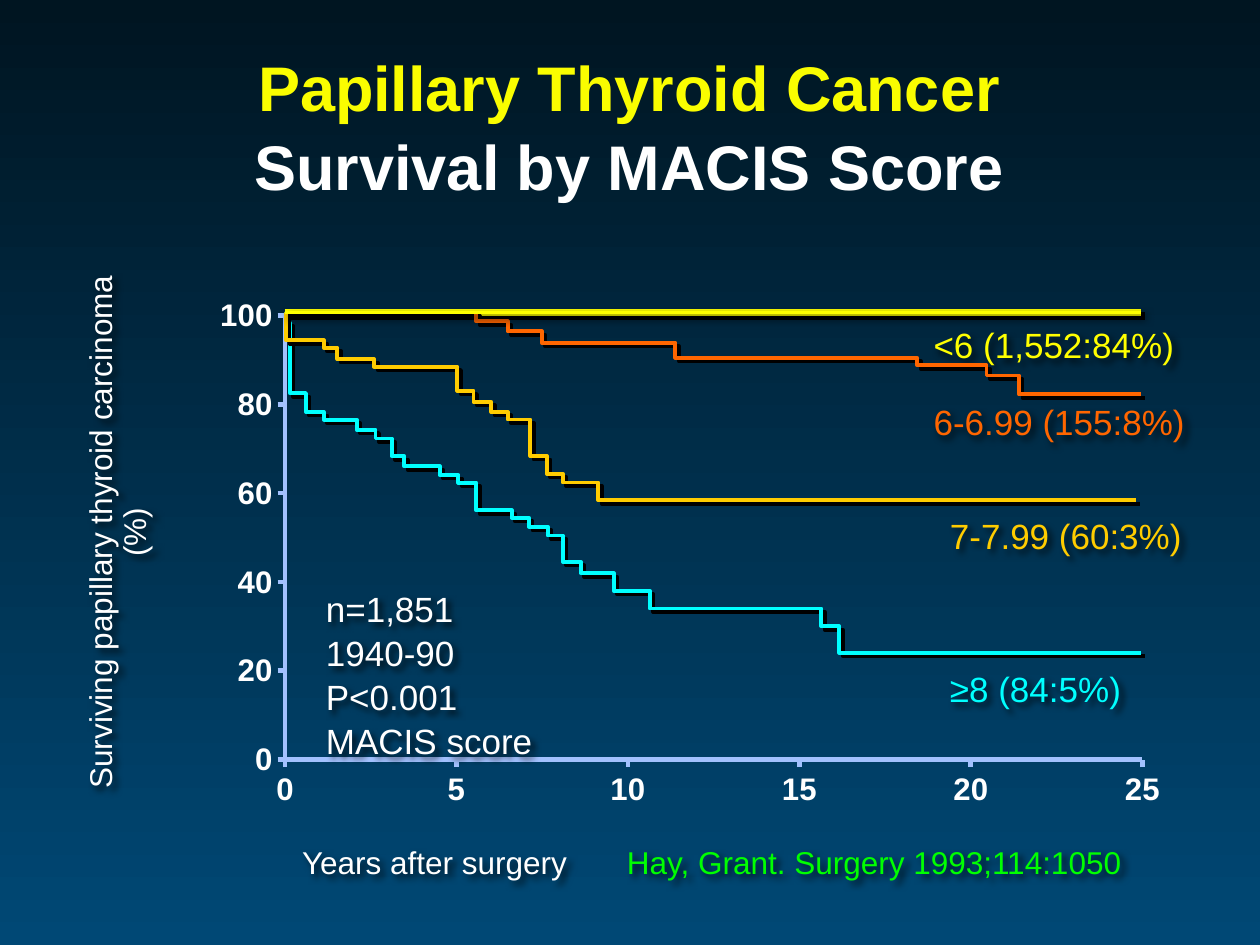
"""Build the survival slide: axes, stepped curves and labels."""
from lxml.etree import SubElement
from pptx import Presentation
from pptx.chart.data import XyChartData
from pptx.dml.color import RGBColor
from pptx.enum.chart import XL_CHART_TYPE, XL_MARKER_STYLE, XL_TICK_MARK
from pptx.enum.shapes import MSO_CONNECTOR
from pptx.enum.text import MSO_ANCHOR, MSO_AUTO_SIZE, PP_ALIGN
from pptx.oxml import parse_xml
from pptx.oxml.ns import nsdecls, qn
from pptx.util import Cm, Pt

THEME = dict(
    font="Arial", dark="001521", deep="004875", axis="A2C1FE",
    white="FFFFFF", title="FAFD00", yellow="FFFF00", orange="FF6600",
    gold="FFCC00", cyan="00FFFF", green="00FF00", black="000000",
    head=36, label=20, note=18, tick=17.8, thin=2.25, thick=4.5, rule=2.67,
)
TITLE = [("Papillary Thyroid Cancer", "title"), ("Survival by MACIS Score", "white")]
SIDE = "Surviving papillary thyroid carcinoma (%)"
FOOT = [("Years after surgery", "white"), ("\tHay, Grant. Surgery 1993;114:1050", "green")]
FACTS = ["n=1,851", "1940-90", "P<0.001", "MACIS score"]
LABELS = [
    ("<6 (1,552:84%)", "yellow", 18.57, 6.4, 5.41),
    ("6-6.99 (155:8%)", "orange", 18.57, 7.95, 5.61),
    ("7-7.99 (60:3%)", "gold", 18.9, 10.24, 5.21),
    ("≥8 (84:5%)", "cyan", 18.9, 13.34, 3.99),
]
CURVES = [
    ("yellow", "thick", 25, []),
    ("cyan", "thin", 25, [
        (0.04, 97.74), (0.15, 81.92), (0.62, 77.68), (1.14, 75.99),
        (2.1, 73.73), (2.65, 71.75), (3.12, 67.8), (3.49, 65.54),
        (4.52, 63.56), (5.07, 61.86), (5.59, 55.65), (6.62, 53.95),
        (7.13, 51.98), (7.68, 50), (8.12, 44.07), (8.64, 41.53),
        (9.6, 37.57), (10.66, 33.62), (15.66, 29.66), (16.18, 23.73)]),
    ("gold", "thin", 24.85, [
        (0.04, 93.79), (1.14, 92.09), (1.54, 89.55), (2.61, 87.85),
        (5.04, 82.49), (5.51, 79.94), (6.03, 77.68), (6.51, 75.99),
        (7.17, 67.8), (7.65, 63.84), (8.12, 61.86), (9.15, 57.91)]),
    ("orange", "thin", 25, [
        (5.59, 98.02), (6.51, 95.76), (7.5, 93.22), (11.4, 89.83),
        (18.46, 88.14), (20.48, 85.88), (21.43, 81.64)]),
]
LEFT, BASE, WIDE, TALL = 5.74, 15.29, 17.27, 8.99
YEARS, FULL = 25, 100


def tint(name):
    return RGBColor.from_string(THEME[name])


def spot(year, rate):
    return Cm(LEFT + WIDE * year / YEARS), Cm(BASE - TALL * rate / FULL)


def style(font, size, hue, bold=False):
    font.name, font.size, font.bold = THEME["font"], Pt(THEME[size]), bold
    font.color.rgb = tint(hue)


def stroke(line, hue, width):
    line.color.rgb = tint(hue)
    line.width = Pt(THEME[width])


def shade(shape, gap=2.8, blur=0, alpha=100):
    group = SubElement(shape._element.spPr, qn("a:effectLst"))
    cast = SubElement(group, qn("a:outerShdw"), blurRad=str(Pt(blur)),
                      dist=str(Pt(gap)), dir="2700000", algn="ctr", rotWithShape="0")
    tone = SubElement(cast, qn("a:srgbClr"), val=THEME["black"])
    SubElement(tone, qn("a:alpha"), val=str(alpha * 1000))


def add_text(slide, place, rows, size, wrap=False, bold=False):
    box = slide.shapes.add_textbox(*map(Cm, place))
    frame = box.text_frame
    frame.word_wrap = wrap
    frame.auto_size = MSO_AUTO_SIZE.NONE if wrap else MSO_AUTO_SIZE.SHAPE_TO_FIT_TEXT
    frame.text = "\n".join("".join(text for text, hue in row) for row in rows)
    for para, row in zip(frame.paragraphs, rows):
        para.text = ""
        for text, hue in row:
            run = para.add_run()
            run.text = text
            style(run.font, size, hue, bold)
    return box


def add_axes(slide):
    data = XyChartData()
    data.add_series("Series 1").add_data_point(0, 0)
    chart = slide.shapes.add_chart(XL_CHART_TYPE.XY_SCATTER, Cm(3.84), Cm(5.77),
                                   Cm(19.66), Cm(11.1), data).chart
    chart.has_title = chart.has_legend = False
    style(chart.font, "tick", "white", True)
    plot = chart.plots[0]
    plot.vary_by_categories = False
    line = plot.series[0]
    line.smooth = False
    line.marker.style = XL_MARKER_STYLE.NONE
    line.format.line.fill.background()
    for axis, top, step in ((chart.category_axis, YEARS, 5), (chart.value_axis, FULL, 20)):
        axis.minimum_scale, axis.maximum_scale, axis.major_unit = 0, top, step
        axis.has_major_gridlines = False
        axis.major_tick_mark, axis.minor_tick_mark = XL_TICK_MARK.OUTSIDE, XL_TICK_MARK.NONE
        axis.tick_labels.number_format = "0"
        axis.tick_labels.number_format_is_linked = False
        style(axis.tick_labels.font, "tick", "white", True)
        stroke(axis.format.line, "axis", "rule")
    area = chart._chartSpace.chart.plotArea
    for old in area.findall(qn("c:layout")):
        area.remove(old)
    spots = "".join(f'<c:{key} val="{val}"/>' for key, val in (
        ("layoutTarget", "inner"), ("xMode", "edge"), ("yMode", "edge"),
        ("x", 0.097), ("y", 0.053), ("w", 0.879), ("h", 0.807)))
    area.insert(0, parse_xml(f'<c:layout {nsdecls("c")}><c:manualLayout>{spots}'
                             '</c:manualLayout></c:layout>'))


def add_curve(slide, hue, width, end, drops):
    rate, points = FULL, []
    for year, low in drops:
        points += [spot(year, rate), spot(year, low)]
        rate = low
    points.append(spot(end, rate))
    pen = slide.shapes.build_freeform(*spot(0, FULL))
    pen.add_line_segments(points, close=False)
    shape = pen.convert_to_shape()
    shape.fill.background()
    stroke(shape.line, hue, width)
    shade(shape)


def main():
    deck = Presentation()
    deck.slide_width, deck.slide_height = Cm(25.4), Cm(19.05)
    slide = deck.slides.add_slide(deck.slide_layouts[6])
    fill = slide.background.fill
    fill.gradient()
    fill.gradient_angle = 270
    for stop, hue, place in zip(fill.gradient_stops, ("dark", "deep"), (0, 1)):
        stop.color.rgb, stop.position = tint(hue), place

    add_axes(slide)
    side = add_text(slide, (-3.19, 9.9, 11.2, 1.65), [[(SIDE, "white")]], "note", True)
    side.rotation = 270
    para = side.text_frame.paragraphs[0]
    para.alignment, para.line_spacing = PP_ALIGN.CENTER, 0.9
    foot = add_text(slide, (5.84, 16.87, 17.4, 1.02), [FOOT], "note")
    tabs = SubElement(foot.text_frame.paragraphs[0]._p.get_or_add_pPr(), qn("a:tabLst"))
    SubElement(tabs, qn("a:tab"), pos=str(Cm(6.55)), algn="l")
    notes = [add_text(slide, (x, y, width, 1.12), [[(text, hue)]], "label")
             for text, hue, x, y, width in LABELS]
    facts = add_text(slide, (6.32, 11.68, 4.7, 3.68),
                     [[(text, "white")] for text in FACTS], "label")
    for para in facts.text_frame.paragraphs:
        para.line_spacing = 1.05
    for box in (side, foot, facts, *notes):
        shade(box, 3, 4, 75)

    for curve in CURVES:
        add_curve(slide, *curve)
    line = slide.shapes.add_connector(MSO_CONNECTOR.STRAIGHT, *spot(0, FULL), *spot(YEARS, FULL))
    stroke(line.line, "yellow", "thin")
    shade(line, 3, 5, 75)

    first, last = TITLE
    title = add_text(slide, (1.9, 0.97, 21.57, 3.07), [[first], [last]], "head", True, True)
    title.text_frame.vertical_anchor = MSO_ANCHOR.MIDDLE
    for para in title.text_frame.paragraphs:
        para.alignment, para.line_spacing = PP_ALIGN.CENTER, 1.05
    deck.save("out.pptx")


if __name__ == "__main__":
    main()
